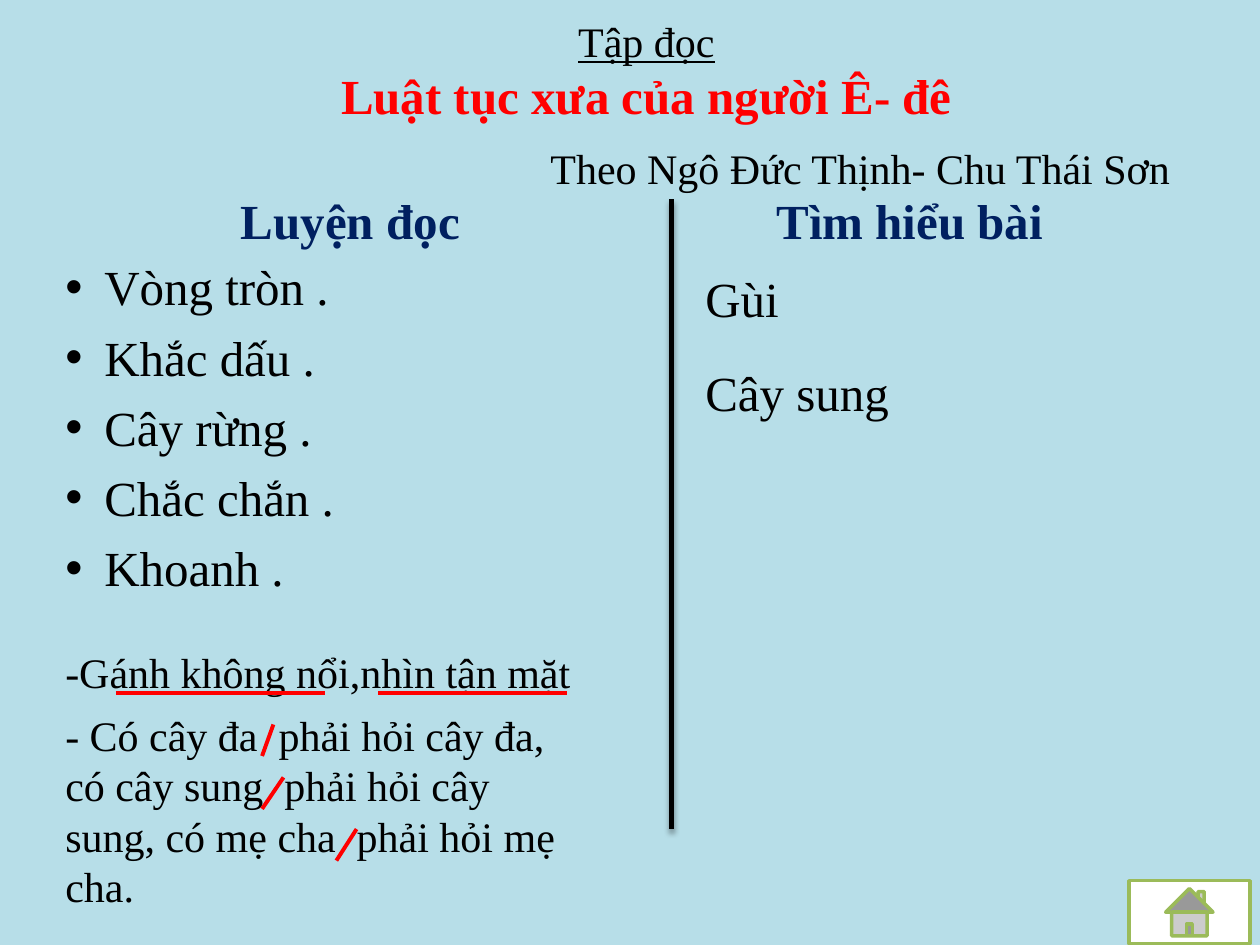
from lxml import etree
from pptx import Presentation
from pptx.dml.color import RGBColor
from pptx.enum import shapes, text
from pptx.oxml import ns
from pptx.util import Inches, Pt

SKY = RGBColor(0xB7, 0xDE, 0xE8)
BLACK = RGBColor(0, 0, 0)
RED = RGBColor(0xFF, 0, 0)
NAVY = RGBColor(0, 0x20, 0x60)
GREEN = RGBColor(0x9B, 0xBB, 0x59)
WHITE = RGBColor(0xFF, 0xFF, 0xFF)
FONT = "Times New Roman"


def format_paragraph(p, size, color=BLACK, bold=False, underline=False):
    for r in p.runs:
        r.font.name = FONT
        r.font.size = Pt(size)
        r.font.color.rgb = color
        r.font.bold = bold
        r.font.underline = underline


def add_text(s, box, content, size, color=BLACK, bold=False, wrap=True,
             align=text.PP_ALIGN.LEFT, anchor=text.MSO_ANCHOR.TOP):
    tf = s.shapes.add_textbox(*map(Inches, box)).text_frame
    tf.word_wrap = wrap
    tf.vertical_anchor = anchor
    tf.text = content
    for p in tf.paragraphs:
        p.alignment = align
        format_paragraph(p, size, color, bold)
    return tf


def add_line(s, start, end, color, width):
    line = s.shapes.add_connector(shapes.MSO_CONNECTOR.STRAIGHT,
                                  *map(Inches, start + end))
    line.line.color.rgb = color
    line.line.width = Pt(width)
    return etree.SubElement(line._element.spPr, ns.qn("a:effectLst"))


def add_bullet(p, indent):
    pPr = p._p.get_or_add_pPr()
    pPr.set("marL", str(Inches(indent)))
    pPr.set("indent", str(-Inches(indent)))
    etree.SubElement(pPr, ns.qn("a:buFont"), typeface="Arial")
    etree.SubElement(pPr, ns.qn("a:buChar"), char="•")


def add_header(s, left, top, width, height):
    tf = add_text(s, (left, top, width, height),
                  "Tập đọc\nLuật tục xưa của người Ê- đê", 24,
                  align=text.PP_ALIGN.CENTER, anchor=text.MSO_ANCHOR.MIDDLE)
    subject, title = tf.paragraphs
    format_paragraph(subject, 24, underline=True)
    format_paragraph(title, 28, RED, bold=True)
    add_text(s, (left + 3.6, top + 1.04, 5.17, 0.5),
             "Theo Ngô Đức Thịnh- Chu Thái Sơn", 24, wrap=False)


def add_heading(s, left, top, content):
    add_text(s, (left, top, 4.42, 0.7), content, 28, NAVY, bold=True,
             align=text.PP_ALIGN.CENTER, anchor=text.MSO_ANCHOR.BOTTOM)


def add_reading(s, left, top):
    add_heading(s, left + 0.15, top, "Luyện đọc")
    words = ["Vòng tròn .", "Khắc dấu .", "Cây rừng .", "Chắc chắn .", "Khoanh ."]
    tf = add_text(s, (left, top + 0.66, 3.75, 2.87), "\n".join(words), 28)
    for p in tf.paragraphs:
        p.space_before = Pt(6.5)
        add_bullet(p, 0.31)

    add_text(s, (left, top + 3.75, 4.5, 0.5), "-Gánh không nổi,nhìn tận mặt", 24)
    add_text(s, (left, top + 4.25, 4.33, 1.72),
             "- Có cây đa  phải hỏi cây đa, có cây sung  phải hỏi cây sung, "
             "có mẹ cha  phải hỏi mẹ cha.", 24)
    underlines = [(0.5, 2.16), (2.58, 4.08)]
    for x1, x2 in underlines:
        add_line(s, (left + x1, top + 4.17), (left + x2, top + 4.17), RED, 2.25)
    pauses = [(1.75, 4.42, 1.66), (1.83, 4.84, 1.66), (2.41, 5.25, 2.25)]
    for x1, y, x2 in pauses:
        add_line(s, (left + x1, top + y), (left + x2, top + y + 0.25), RED, 2.25)


def add_comprehension(s, left, top):
    add_heading(s, left - 0.49, top, "Tìm hiểu bài")
    add_text(s, (left, top + 0.75, 4, 1.17), "Gùi", 28)
    add_text(s, (left, top + 1.5, 1.67, 0.57), "Cây sung", 28, wrap=False)


def add_divider(s, x, top, height):
    effects = add_line(s, (x, top), (x, top + height), BLACK, 3)
    shadow = etree.SubElement(effects, ns.qn("a:outerShdw"), blurRad=str(Pt(3.1)),
                              dist=str(Pt(1.8)), dir="5400000", rotWithShape="0")
    color = etree.SubElement(shadow, ns.qn("a:srgbClr"), val=str(BLACK))
    etree.SubElement(color, ns.qn("a:alpha"), val="35000")


def add_home_button(s, left, top, width, height):
    sp = s.shapes.add_shape(shapes.MSO_SHAPE.ACTION_BUTTON_HOME,
                            *map(Inches, (left, top, width, height)))
    sp.shadow.inherit = False
    sp.fill.solid()
    sp.fill.fore_color.rgb = WHITE
    sp.line.color.rgb = GREEN
    sp.line.width = Pt(2)


def main():
    prs = Presentation()
    prs.slide_width = Inches(10)
    prs.slide_height = Inches(7.5)
    s = prs.slides.add_slide(prs.slide_layouts[6])
    s.background.fill.solid()
    s.background.fill.fore_color.rgb = SKY

    add_header(s, 0.67, 0.04, 8.92, 1.03)
    add_reading(s, 0.42, 1.33)
    add_comprehension(s, 5.5, 1.33)
    add_divider(s, 5.33, 1.58, 5)
    add_home_button(s, 8.96, 6.99, 0.96, 0.5)
    prs.save("out.pptx")


if __name__ == "__main__":
    main()
